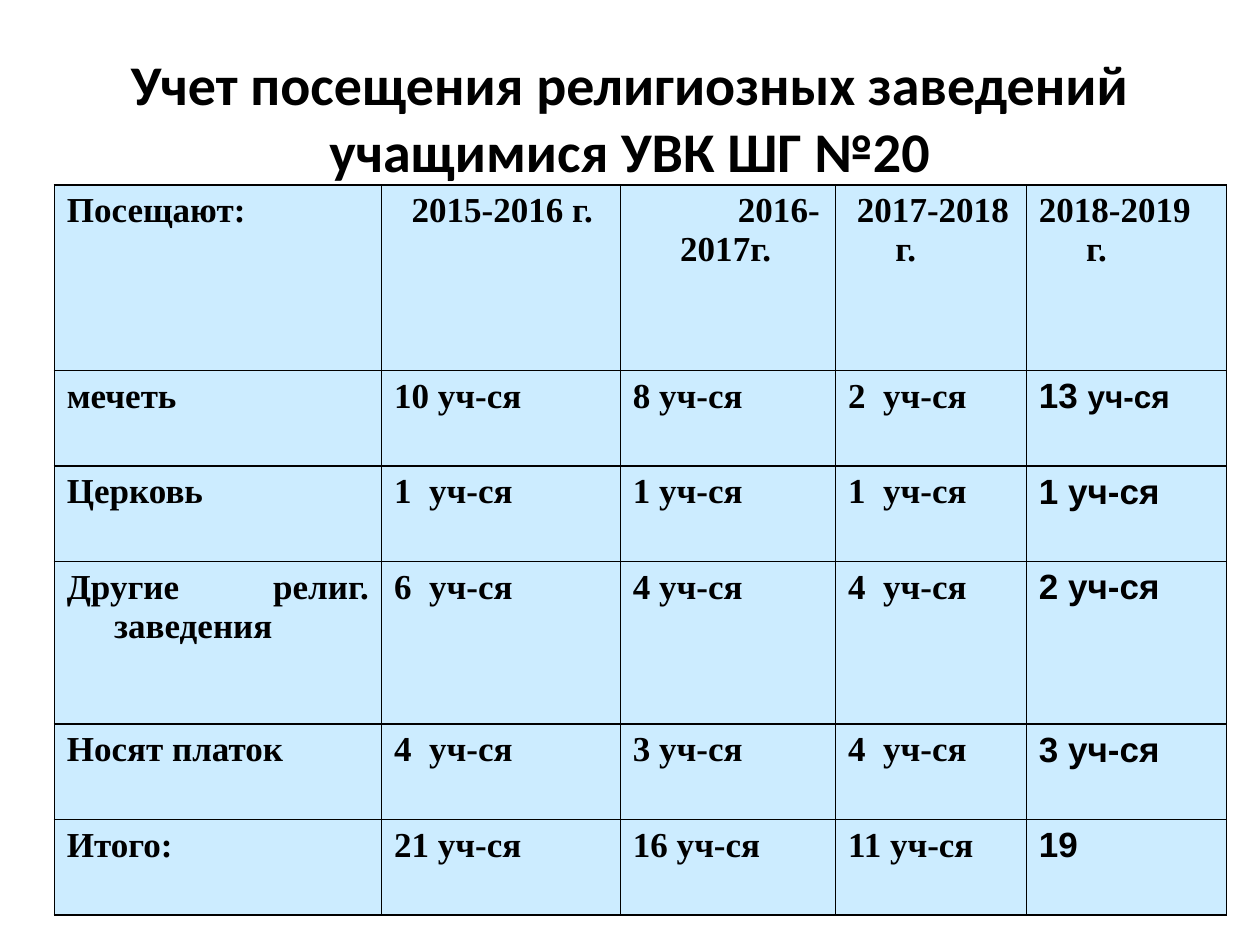
from lxml import etree
from pptx import Presentation
from pptx.dml.color import RGBColor
from pptx.enum.text import MSO_ANCHOR, PP_ALIGN
from pptx.oxml.ns import qn
from pptx.util import Pt

BLACK = RGBColor(0x00, 0x00, 0x00)
PALE_BLUE = RGBColor(0xCC, 0xEC, 0xFF)
CENTER, JUSTIFY = PP_ALIGN.CENTER, PP_ALIGN.JUSTIFY
MIDDLE = MSO_ANCHOR.MIDDLE
SERIF, SANS, TITLE_FONT = "Times New Roman", "Arial", "Calibri"

TITLE = "Учет посещения религиозных заведений учащимися УВК ШГ №20"
ROWS = [
    ["Посещают:", "2015-2016 г.", "2016-2017г.", "2017-2018 г.", "2018-2019 г."],
    ["мечеть", "10 уч-ся", "8 уч-ся", "2  уч-ся", "13 уч-ся"],
    ["Церковь", "1  уч-ся", "1 уч-ся", "1  уч-ся", "1 уч-ся"],
    ["Другие религ. заведения", "6  уч-ся", "4 уч-ся", "4  уч-ся", "2 уч-ся"],
    ["Носят платок", "4  уч-ся", "3 уч-ся", "4  уч-ся", "3 уч-ся"],
    ["Итого:", "21 уч-ся", "16 уч-ся", "11 уч-ся", "19"],
]
COL_WIDTHS = [187, 136.5, 123, 109, 114.5]
ROW_HEIGHTS = [106, 54.6, 54.6, 92.8, 54.6, 54.6]
HANGING = 27
HEADER_SHIFTS = [0, 10, 60, 5, 0]  # first-line offset of each heading


def style_run(r, font, size):
    r.font.name = font
    r.font.size = Pt(size)
    r.font.bold = True
    r.font.color.rgb = BLACK


def add_title(s, text):
    title = s.shapes.title
    title.left, title.top, title.width, title.height = Pt(36), Pt(21.6), Pt(648), Pt(90)
    tf = title.text_frame
    tf.text = text
    tf.vertical_anchor = MIDDLE
    p = tf.paragraphs[0]
    p.alignment = CENTER
    style_run(p.runs[0], TITLE_FONT, 32)


def set_borders(cell, color, width):
    tc_pr = cell._tc.get_or_add_tcPr()
    for side in ("a:lnL", "a:lnR", "a:lnT", "a:lnB"):
        ln = etree.SubElement(tc_pr, qn(side), w=str(Pt(width)))
        fill = etree.SubElement(ln, qn("a:solidFill"))
        etree.SubElement(fill, qn("a:srgbClr"), val=str(color))


def fill_cell(cell, text, font, shift):
    set_borders(cell, BLACK, 1)
    cell.fill.solid()
    cell.fill.fore_color.rgb = PALE_BLUE
    cell.text_frame.text = text
    p = cell.text_frame.paragraphs[0]
    p.alignment = JUSTIFY
    p_pr = p._p.get_or_add_pPr()
    p_pr.set("marL", str(Pt(HANGING)))
    p_pr.set("indent", str(Pt(shift - HANGING)))
    style_run(p.runs[0], font, 20)


def add_visits_table(s):
    frame = s.shapes.add_table(len(ROWS), len(COL_WIDTHS), Pt(31), Pt(105.8),
                               Pt(sum(COL_WIDTHS)), Pt(sum(ROW_HEIGHTS)))
    table = frame.table
    for column, width in zip(table.columns, COL_WIDTHS):
        column.width = Pt(width)
    for row, height in zip(table.rows, ROW_HEIGHTS):
        row.height = Pt(height)

    last = len(COL_WIDTHS) - 1
    for i, texts in enumerate(ROWS):
        for j, text in enumerate(texts):
            font = SANS if i > 0 and j == last else SERIF
            shift = HEADER_SHIFTS[j] if i == 0 else 0
            fill_cell(table.cell(i, j), text, font, shift)

    # The mosque count for the last year has a smaller unit
    p = table.cell(1, last).text_frame.paragraphs[0]
    p.runs[0].text = "13 "
    r = p.add_run()
    r.text = "уч-ся"
    style_run(r, SANS, 18)


def main():
    prs = Presentation()
    prs.slide_width, prs.slide_height = Pt(720), Pt(540)
    s = prs.slides.add_slide(prs.slide_layouts[5])
    add_title(s, TITLE)
    add_visits_table(s)
    prs.save("out.pptx")


if __name__ == "__main__":
    main()
